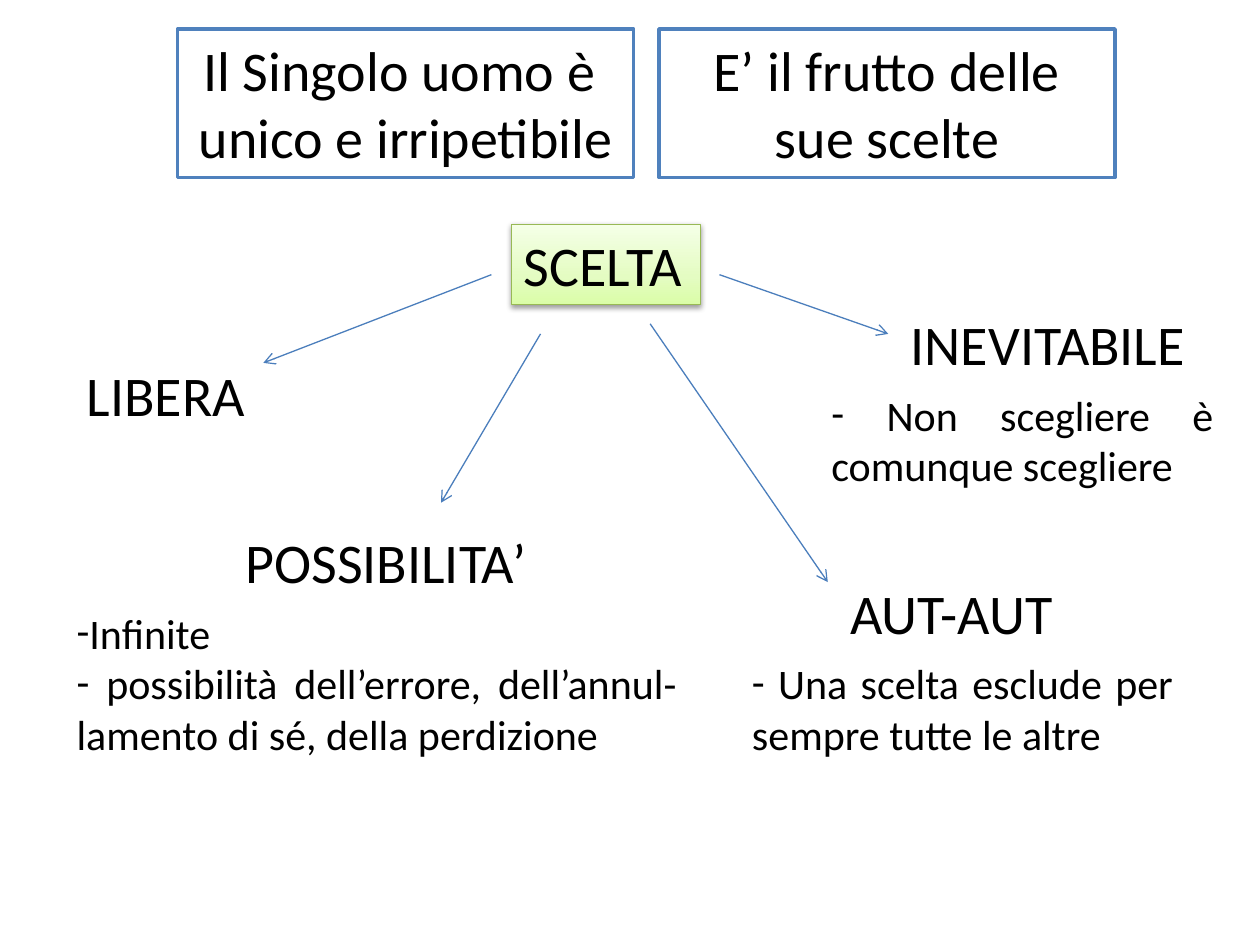
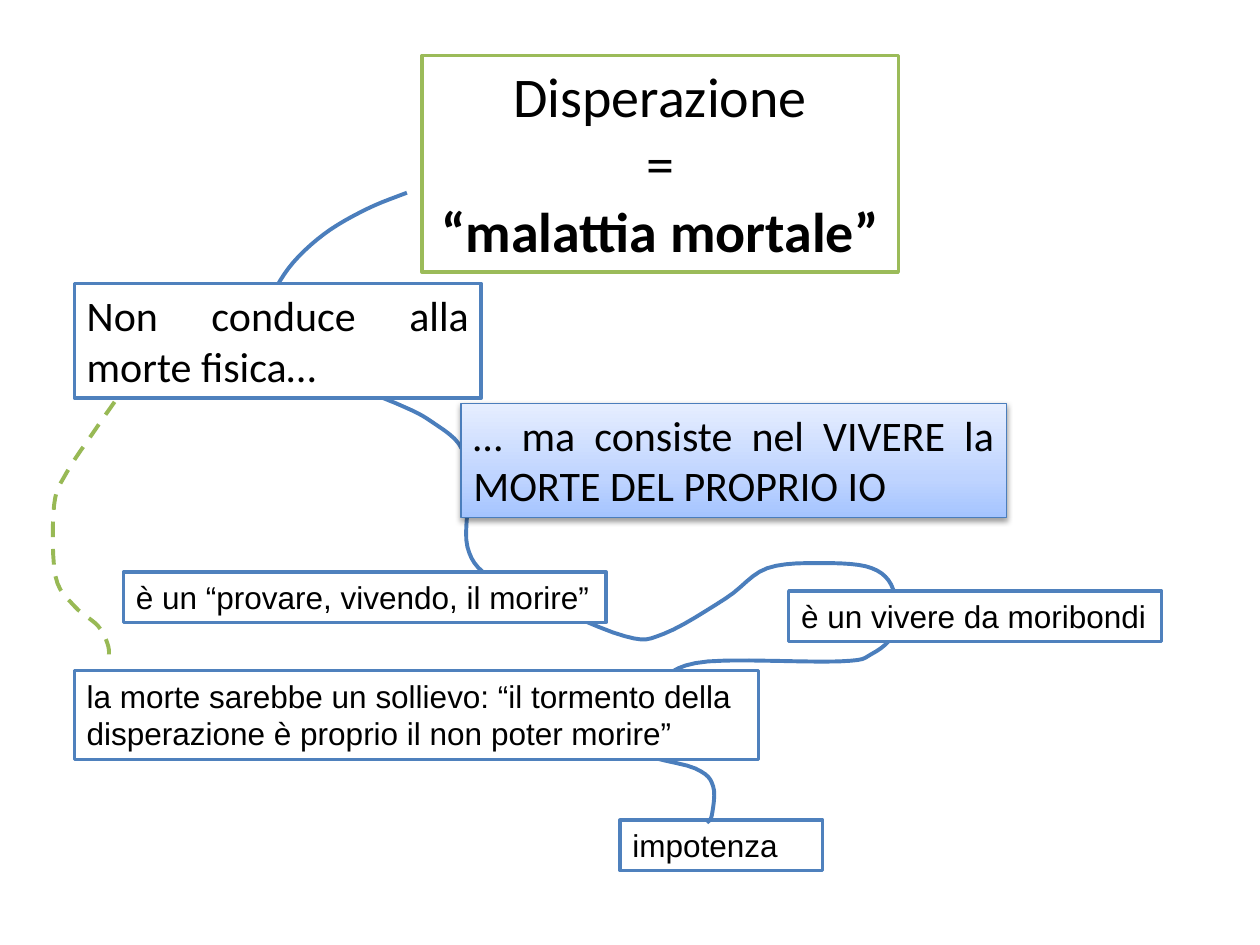
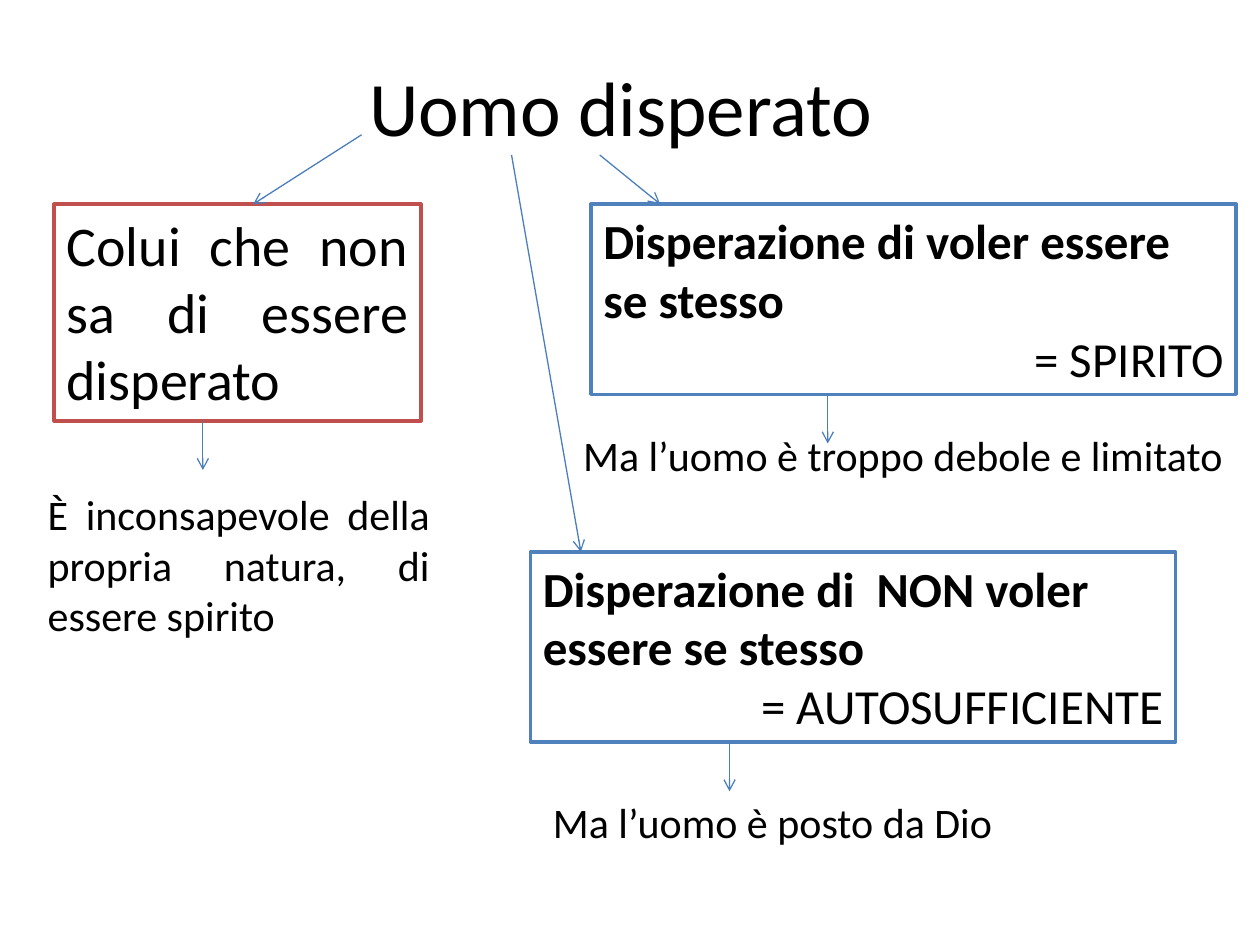
from copy import deepcopy
from typing import NamedTuple

from pptx import Presentation
from pptx import util as u
from pptx.dml import color as dml_color
from pptx.enum import dml, shapes, text
from pptx.oxml import ns
from lxml import etree

PX = 9144  # EMU; 100 px to the inch

COLORS = {
    "ink": "000000", "paper": "FFFFFF",
    "blue": "4F81BD", "green": "9BBB59", "red": "C0504D",
    "thread": "4B7EBC", "green_thread": "98B955",
}
GREEN_GLOW = (("DAFDA7", 0), ("E4FCC2", 0.35), ("F5FFE7", 1))
BLUE_GLOW = (("A4C4FF", 0), ("BFD4FF", 0.35), ("E6EEFF", 1))

LEFT, CENTER = text.PP_ALIGN.LEFT, text.PP_ALIGN.CENTER
RIGHT, JUSTIFY = text.PP_ALIGN.RIGHT, text.PP_ALIGN.JUSTIFY


class Box(NamedTuple):
    left: int
    top: int
    width: int
    height: int

    def inside(self, left, top, width, height):
        return Box(self.left + left, self.top + top, width, height)

    def point(self, x, y):
        return self.left + x, self.top + y

    def emu(self):
        return [u.Emu(side * PX) for side in self]


class Line(NamedTuple):
    """A paragraph that departs from the style of its box."""
    words: str
    align: text.PP_ALIGN = CENTER
    bold: bool = False


def rgb(hex_code):
    return dml_color.RGBColor.from_string(hex_code)


def sub(parent, tag, **attributes):
    return etree.SubElement(parent, ns.qn(tag), attributes)


def write(shape, lines, size, align=JUSTIFY, font="Calibri", dashes=False,
          wrap=True, grow=True, anchor=text.MSO_ANCHOR.TOP):
    frame = shape.text_frame
    frame.word_wrap = wrap
    frame.vertical_anchor = anchor
    if grow:
        frame.auto_size = text.MSO_AUTO_SIZE.SHAPE_TO_FIT_TEXT
    lines = [line if isinstance(line, Line) else Line(line, align) for line in lines]
    frame.text = "\n".join(line.words for line in lines)
    for paragraph, line in zip(frame.paragraphs, lines):
        paragraph.alignment = line.align
        for run in paragraph.runs:
            run.font.name, run.font.size = font, u.Pt(size)
            run.font.bold = line.bold
            run.font.color.rgb = rgb(COLORS["ink"])
        if dashes:
            properties = paragraph._p.get_or_add_pPr()
            sub(properties, "a:buFont", typeface=font)
            sub(properties, "a:buChar", char="-")


def add_label(slide, box, lines, size, **style):
    write(slide.shapes.add_textbox(*box.emu()), lines, size, **style)


def add_rectangle(slide, box, outline, width):
    rectangle = slide.shapes.add_shape(shapes.MSO_SHAPE.RECTANGLE, *box.emu())
    rectangle.shadow.inherit = False
    rectangle.line.color.rgb = rgb(COLORS[outline])
    rectangle.line.width = u.Pt(width)
    return rectangle


def add_card(slide, box, lines, size, outline="blue", **style):
    card = add_rectangle(slide, box, outline, 2)
    card.fill.solid()
    card.fill.fore_color.rgb = rgb(COLORS["paper"])
    write(card, lines, size, **style)


def add_glowing_card(slide, box, lines, size, outline, glow):
    """A card with a three-stop gradient, darkest at the foot, and a soft shadow."""
    card = add_rectangle(slide, box, outline, 0.75)
    card.fill.gradient()
    card.fill.gradient_angle = 90
    stops = card.element.spPr.find(".//" + ns.qn("a:gsLst"))
    stops.append(deepcopy(stops[-1]))
    for stop, (hex_code, position) in zip(card.fill.gradient_stops, glow):
        stop.color.rgb = rgb(hex_code)
        stop.position = position
    effects = card.element.spPr.find(ns.qn("a:effectLst"))
    shadow = sub(effects, "a:outerShdw", blurRad="40000", dist="20000",
                 dir="5400000", rotWithShape="0")
    sub(sub(shadow, "a:srgbClr", val=COLORS["ink"]), "a:alpha", val="38000")
    write(card, lines, size)


def add_arrow(slide, start, end):
    ends = [u.Emu(length * PX) for length in (*start, *end)]
    arrow = slide.shapes.add_connector(shapes.MSO_CONNECTOR.STRAIGHT, *ends)
    arrow.line.color.rgb = rgb(COLORS["thread"])
    arrow.line.width = u.Pt(0.75)
    properties = arrow.element.spPr
    sub(properties.find(ns.qn("a:ln")), "a:tailEnd", type="arrow")
    sub(properties, "a:effectLst")


def smooth_curve(knots, steps=6):
    """Points of a Catmull-Rom spline, which passes through every knot."""
    padded = [knots[0], *knots, knots[-1]]
    curve = [knots[0]]
    for before, start, end, after in zip(padded, padded[1:], padded[2:], padded[3:]):
        for step in range(1, steps + 1):
            t = step / steps
            curve.append(tuple(
                b + ((c - a) * t + (2 * a - 5 * b + 4 * c - d) * t ** 2
                     + (3 * b - a - 3 * c + d) * t ** 3) / 2
                for a, b, c, d in zip(before, start, end, after)))
    return curve


def add_thread(slide, legs, color, dash=None):
    """A smooth open line; each leg is a card and knots counted from its corner."""
    knots = [card.point(*knot) for card, offsets in legs for knot in offsets]
    start, *rest = [(x * PX, y * PX) for x, y in smooth_curve(knots)]
    builder = slide.shapes.build_freeform(*start)
    builder.add_line_segments(rest, close=False)
    thread = builder.convert_to_shape()
    thread.shadow.inherit = False
    thread.fill.background()
    thread.line.color.rgb = rgb(COLORS[color])
    thread.line.width = u.Pt(2.25)
    if dash:
        thread.line.dash_style = dash


def draw_theses(slide, box):
    theses = (["Il Singolo uomo è ", "unico e irripetibile"],
              ["E’ il frutto delle sue scelte"])
    gap = 20
    width = (box.width - gap) // 2
    for column, thesis in enumerate(theses):
        add_card(slide, box.inside(column * (width + gap), 0, width, box.height),
                 thesis, 32, align=CENTER)


class Trait(NamedTuple):
    """What choice is, with its arrow and, if any, the remarks below it."""
    name: str
    place: tuple
    arrow: tuple
    remarks: tuple = ()
    remarks_place: tuple = ()


TRAITS = (
    Trait("LIBERA", (9, 111, 165, 64), ((340, 48), (159, 118))),
    Trait("POSSIBILITA’", (135, 244, 291, 64), ((379, 95), (300, 229)),
          ("Infinite", " possibilità dell’errore, dell’annul-lamento di sé, "
           "della perdizione"), (1, 307, 496, 131)),
    Trait("AUT-AUT", (615, 284, 189, 64), ((466, 87), (607, 292)),
          (" Una scelta esclude per sempre tutte le altre",), (537, 347, 354, 91)),
    Trait("INEVITABILE", (663, 71, 244, 64), ((521, 48), (655, 95)),
          (" Non scegliere è comunque scegliere",), (600, 134, 323, 91)),
)


def draw_choice(slide, box):
    add_glowing_card(slide, box.inside(356, 8, 150, 64), ["SCELTA"], 32,
                     "green_thread", GREEN_GLOW)
    for trait in TRAITS:
        add_label(slide, box.inside(*trait.place), [trait.name], 32)
        if trait.remarks:
            add_label(slide, box.inside(*trait.remarks_place), trait.remarks, 24,
                      dashes=True)
        start, end = trait.arrow
        add_arrow(slide, box.point(*start), box.point(*end))


def draw_mortal_illness(slide, box):
    illness = box.inside(335, 44, 378, 172)
    body = box.inside(59, 225, 323, 91)
    self_death = box.inside(366, 320, 433, 91)
    living_death = box.inside(98, 454, 383, 40)
    moribund = box.inside(626, 469, 296, 40)
    relief = box.inside(59, 532, 543, 71)
    impotence = box.inside(492, 651, 161, 40)
    small = dict(size=18, font="Arial", align=LEFT)

    add_card(slide, illness,
             ["Disperazione", "=", Line("“malattia mortale”", bold=True)], 32,
             outline="green", align=CENTER)
    add_card(slide, impotence, ["impotenza"], **small)
    add_thread(slide, (
        (illness, ((-12, 109), (-44, 122), (-78, 142), (-106, 169))),
        (body, ((155, 18), (160, 45), (190, 69), (255, 95), (284, 110))),
        (self_death, ((1, 37), (5, 76), (5, 114))),
        (living_death, ((289, 3), (330, 23), (398, 51), (429, 49), (478, 21),
                        (511, -3), (557, -7))),
        (moribund, ((66, -18), (83, -1), (84, 32), (66, 50), (40, 56))),
        (relief, ((503, -7), (466, 6), (443, 23), (445, 62), (493, 78), (507, 92))),
        (impotence, ((73, -4), (69, 2))),
    ), "thread")
    add_glowing_card(slide, self_death,
                     ["… ma consiste nel VIVERE la MORTE DEL PROPRIO IO"], 24,
                     "thread", BLUE_GLOW)
    add_card(slide, body, ["Non conduce alla morte fisica…"], 24)
    add_card(slide, living_death, ["è un “provare, vivendo, il morire”"],
             wrap=False, **small)
    add_card(slide, moribund, ["è un vivere da moribondi"], wrap=False, **small)
    add_card(slide, relief,
             ["la morte sarebbe un sollievo: “il tormento della disperazione "
              "è proprio il non poter morire”"], **small)
    add_thread(slide, (
        (body, ((32, 94), (16, 117), (-6, 150), (-16, 176), (-15, 232), (0, 256))),
        (relief, ((19, -35), (27, -19), (27, -7))),
    ), "green_thread", dml.MSO_LINE.DASH)


def draw_despair_form(slide, box, form, outcome, outcome_place, origin, entry_x,
                      stem_x, size=28, outline="blue"):
    """A card, an arrow from origin to its top edge and one down to its outcome."""
    add_card(slide, box, form, size, outline=outline)
    add_label(slide, box.inside(*outcome_place), [outcome], 24)
    add_arrow(slide, origin, box.point(entry_x, 0))
    stem_length = 39
    add_arrow(slide, box.point(stem_x, box.height),
              box.point(stem_x, box.height + stem_length))


def draw_desperate_man(slide, box):
    title = box.inside(43, 21, 900, 125)
    add_label(slide, title, ["Uomo disperato"], 44,
              align=CENTER, grow=False, anchor=text.MSO_ANCHOR.MIDDLE)
    draw_despair_form(
        slide, box.inside(43, 162, 291, 172),
        ["Colui che non sa di essere disperato"],
        "È inconsapevole della propria natura, di essere spirito",
        (-15, 221, 323, 131), origin=title.point(244, 86), entry_x=158, stem_x=118,
        size=32, outline="red")
    draw_despair_form(
        slide, box.inside(469, 162, 512, 151),
        [Line("Disperazione di voler essere se stesso", LEFT, True),
         Line("= SPIRITO", RIGHT)],
        "Ma l’uomo è troppo debole e limitato",
        (-16, 174, 547, 50), origin=title.point(433, 102), entry_x=55, stem_x=188)
    draw_despair_form(
        slide, box.inside(421, 438, 512, 151),
        [Line("Disperazione di  NON voler essere se stesso", LEFT, True),
         Line("= AUTOSUFFICIENTE", RIGHT)],
        "Ma l’uomo è posto da Dio",
        (8, 189, 409, 50), origin=title.point(363, 102), entry_x=40, stem_x=158)


def main():
    page = Box(0, 0, 1000, 750)
    deck = Presentation()
    deck.slide_width, deck.slide_height = page.emu()[2:]
    blank = deck.slide_layouts[6]

    choice = deck.slides.add_slide(blank)
    draw_choice(choice, page.inside(50, 170, 930, 440))
    draw_theses(choice, page.inside(141, 23, 744, 118))
    draw_mortal_illness(deck.slides.add_slide(blank), page)
    draw_desperate_man(deck.slides.add_slide(blank), page)
    deck.save("out.pptx")


if __name__ == "__main__":
    main()
